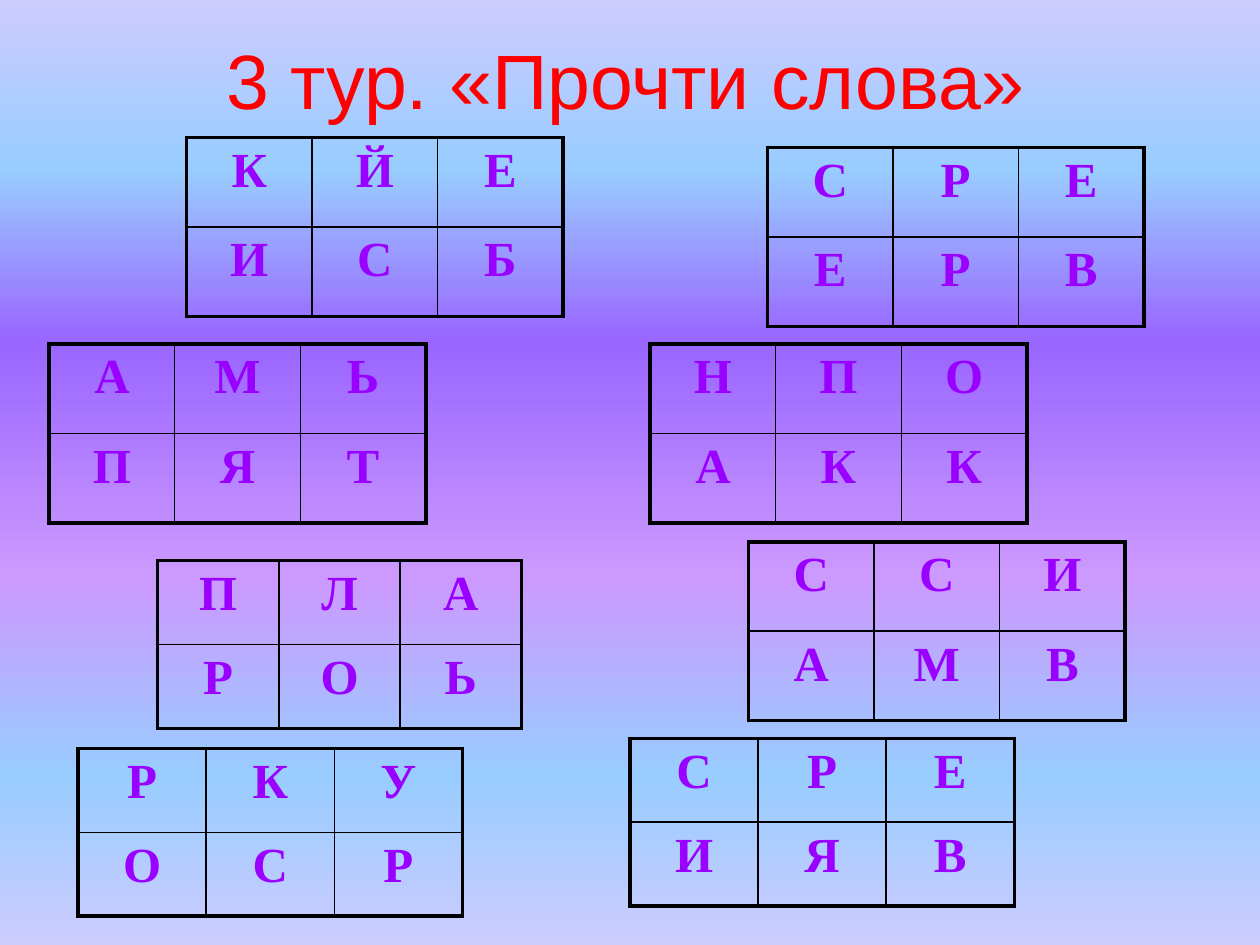
from dataclasses import dataclass

from lxml.etree import SubElement
from pptx import Presentation
from pptx.dml.color import RGBColor
from pptx.enum.text import MSO_ANCHOR, PP_ALIGN
from pptx.oxml.ns import qn
from pptx.util import Inches, Pt


@dataclass(frozen=True)
class Theme:
    title_color: str = "FF0000"
    letter_color: str = "9900FF"
    border_color: str = "000000"
    title_size: float = 44
    letter_size: float = 28
    letter_space: float = 5.6
    outer_line: float = 2.25
    inner_line: float = 1
    sky: tuple = ((0, "CCCCFF"), (18, "99CCFF"), (36, "9966FF"),
                  (61, "CC99FF"), (82, "99CCFF"), (100, "CCCCFF"))


@dataclass(frozen=True)
class LetterGrid:
    left: float
    top: float
    width: float
    height: float
    rows: tuple[str, str]


THEME = Theme()
TITLE_FONT = {"name": "Arial", "size": Pt(THEME.title_size), "bold": False}
LETTER_FONT = {"name": "Times New Roman", "size": Pt(THEME.letter_size), "bold": True}
GRIDS = (
    LetterGrid(1.48, 1.09, 2.99, 1.42, ("КЙЕ", "ИСБ")),
    LetterGrid(0.39, 2.73, 2.99, 1.42, ("АМЬ", "ПЯТ")),
    LetterGrid(1.25, 4.45, 2.89, 1.33, ("ПЛА", "РОЬ")),
    LetterGrid(5.94, 4.3, 2.99, 1.42, ("ССИ", "АМВ")),
    LetterGrid(6.09, 1.17, 2.99, 1.42, ("СРЕ", "ЕРВ")),
    LetterGrid(5.16, 2.73, 2.99, 1.42, ("НПО", "АКК")),
    LetterGrid(5, 5.86, 3.05, 1.33, ("СРЕ", "ИЯВ")),
    LetterGrid(0.62, 5.94, 3.05, 1.33, ("РКУ", "ОСР")),
)


def paint_background(s) -> None:
    fill = s.background.fill
    fill.gradient()
    fill.gradient_angle = 270
    stops = s.element.find(".//" + qn("a:gsLst"))
    for old in list(stops):
        stops.remove(old)
    for percent, color in THEME.sky:
        stop = SubElement(stops, qn("a:gs"), pos=str(percent * 1000))
        SubElement(stop, qn("a:srgbClr"), val=color)


def write_text(p, text: str, font: dict, color: str) -> None:
    p.alignment = PP_ALIGN.CENTER
    r = p.add_run()
    r.text = text
    for name, value in font.items():
        setattr(r.font, name, value)
    r.font.color.rgb = RGBColor.from_string(color)


def add_title(s, text: str) -> None:
    sp = s.shapes.add_textbox(Inches(0.55), Inches(0), Inches(9), Inches(1.25))
    tf = sp.text_frame
    tf.word_wrap = True
    tf.vertical_anchor = MSO_ANCHOR.MIDDLE
    write_text(tf.paragraphs[0], text, TITLE_FONT, THEME.title_color)


def set_borders(cell, outer: dict[str, bool]) -> None:
    """Draw thick lines on the outer sides and thin ones on the rest."""
    tc_pr = cell._tc.get_or_add_tcPr()
    for side, is_outer in outer.items():
        width = Pt(THEME.outer_line if is_outer else THEME.inner_line)
        ln = SubElement(tc_pr, qn(f"a:ln{side}"), w=str(width))
        fill = SubElement(ln, qn("a:solidFill"))
        SubElement(fill, qn("a:srgbClr"), val=THEME.border_color)


def add_grid(s, grid: LetterGrid) -> None:
    n_rows, n_cols = len(grid.rows), len(grid.rows[0])
    table = s.shapes.add_table(n_rows, n_cols, Inches(grid.left), Inches(grid.top),
                               Inches(grid.width), Inches(grid.height)).table
    table.first_row = table.horz_banding = False
    for i, letters in enumerate(grid.rows):
        for j, letter in enumerate(letters):
            cell = table.cell(i, j)
            set_borders(cell, {"L": j == 0, "R": j == n_cols - 1,
                               "T": i == 0, "B": i == n_rows - 1})
            cell.fill.background()
            p = cell.text_frame.paragraphs[0]
            p.space_before = Pt(THEME.letter_space)
            write_text(p, letter, LETTER_FONT, THEME.letter_color)


def main() -> None:
    prs = Presentation()
    prs.slide_width, prs.slide_height = Inches(10), Inches(7.5)
    s = prs.slides.add_slide(prs.slide_layouts[6])
    paint_background(s)
    add_title(s, "3 тур. «Прочти слова» ")
    for grid in GRIDS:
        add_grid(s, grid)
    prs.save("out.pptx")


if __name__ == "__main__":
    main()
